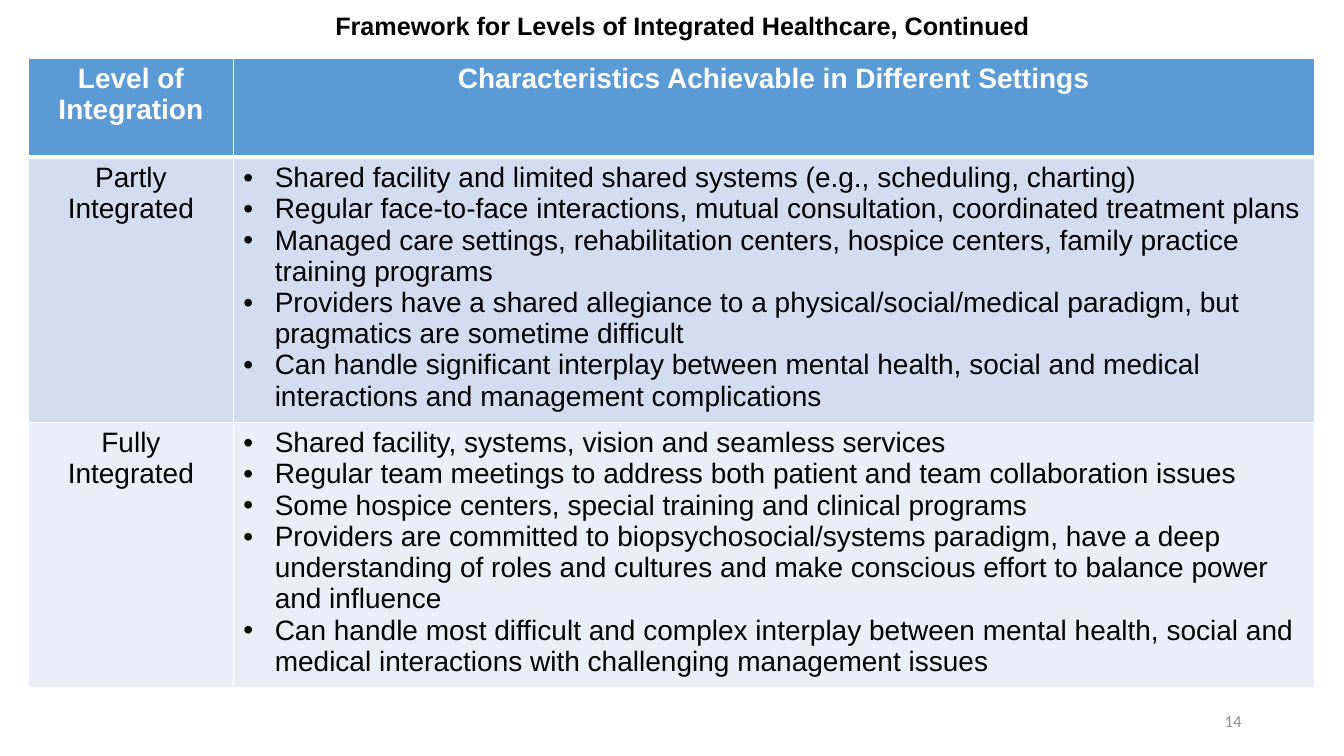
from lxml.etree import SubElement
from pptx import Presentation
from pptx.dml.color import RGBColor
from pptx.enum.text import MSO_ANCHOR, MSO_AUTO_SIZE, PP_ALIGN
from pptx.oxml.ns import qn
from pptx.util import Cm, Pt

BLACK = RGBColor(0x00, 0x00, 0x00)
WHITE = RGBColor(0xFF, 0xFF, 0xFF)
GRAY = RGBColor(0x8C, 0x8C, 0x8C)
HEADER_BLUE = RGBColor(0x5B, 0x9B, 0xD5)
BAND_BLUE = RGBColor(0xD2, 0xDE, 0xEF)
PALE_BLUE = RGBColor(0xEA, 0xEF, 0xF7)

TITLE_FONT = {"name": "Arial", "size": Pt(18), "bold": True}
HEADER_FONT = {"name": "Arial", "size": Pt(20), "bold": True}
BODY_FONT = {"name": "Arial", "size": Pt(20), "bold": False}
NUMBER_FONT = {"name": "Calibri", "size": Pt(12)}
MIDDLE_FRAME = {"word_wrap": True, "auto_size": MSO_AUTO_SIZE.NONE,
                "vertical_anchor": MSO_ANCHOR.MIDDLE}

HEADINGS = ("Level of Integration", ["Characteristics Achievable in Different Settings"])
LEVELS = [
    ("Partly Integrated", [
        "Shared facility and limited shared systems (e.g., scheduling, charting)",
        "Regular face-to-face interactions, mutual consultation, coordinated treatment plans",
        "Managed care settings, rehabilitation centers, hospice centers, family practice training programs",
        "Providers have a shared allegiance to a physical/social/medical paradigm, but pragmatics are sometime difficult",
        "Can handle significant interplay between mental health, social and medical interactions and management complications",
    ]),
    ("Fully Integrated", [
        "Shared facility, systems, vision and seamless services",
        "Regular team meetings to address both patient and team collaboration issues",
        "Some hospice centers, special training and clinical programs",
        "Providers are committed to biopsychosocial/systems paradigm, have a deep understanding of roles and cultures and make conscious effort to balance power and influence",
        "Can handle most difficult and complex interplay between mental health, social and medical interactions with challenging management issues",
    ]),
]


def apply_format(target, values):
    """Set each attribute named in the format values."""
    for attribute, value in values.items():
        setattr(target, attribute, value)


def write_paragraph(paragraph, wording, font, color, alignment):
    """Write one formatted run into a paragraph."""
    run = paragraph.add_run()
    run.text = wording
    apply_format(run.font, font)
    run.font.color.rgb = color
    paragraph.alignment = alignment


def add_bullet(paragraph):
    """Give a paragraph a round bullet and a hanging indent."""
    properties = paragraph._p.get_or_add_pPr()
    properties.set("marL", str(Cm(0.79)))
    properties.set("indent", str(-Cm(0.79)))
    SubElement(properties, qn("a:buFont"), typeface="Arial")
    SubElement(properties, qn("a:buChar"), char="•")


def set_borders(cell, top, bottom):
    """Draw white cell borders with the given top and bottom widths."""
    properties = cell._tc.get_or_add_tcPr()
    for side, width in (("L", 1), ("R", 1), ("T", top), ("B", bottom)):
        line = SubElement(properties, qn(f"a:ln{side}"), w=str(Pt(width)))
        fill = SubElement(line, qn("a:solidFill"))
        SubElement(fill, qn("a:srgbClr"), val=str(WHITE))


def fill_cell(cell, lines, font, color, background, borders, bulleted):
    """Style a cell and write its lines, as bullets or centred."""
    set_borders(cell, *borders)
    cell.fill.solid()
    cell.fill.fore_color.rgb = background
    for index, wording in enumerate(lines):
        paragraph = cell.text_frame.add_paragraph() if index else cell.text_frame.paragraphs[0]
        write_paragraph(paragraph, wording, font, color,
                        PP_ALIGN.LEFT if bulleted else PP_ALIGN.CENTER)
        if bulleted:
            add_bullet(paragraph)


def place_title(slide, left, top, width, height):
    """Place the slide title in the given box."""
    title = slide.shapes.title
    apply_format(title, {"left": left, "top": top, "width": width, "height": height})
    apply_format(title.text_frame, MIDDLE_FRAME)
    heading = title.text_frame.paragraphs[0]
    write_paragraph(heading, "Framework for Levels of Integrated Healthcare, Continued",
                    TITLE_FONT, BLACK, PP_ALIGN.CENTER)
    heading.line_spacing = 0.9


def place_levels(slide, left, top, width, height):
    """Place the table of integration levels in the given box."""
    levels = slide.shapes.add_table(len(LEVELS) + 1, 2, left, top, width, height).table
    level_width, header_height = Cm(5.16), Cm(2.49)
    levels.columns[0].width = level_width
    levels.columns[1].width = width - level_width
    levels.rows[0].height = header_height
    for row in list(levels.rows)[1:]:
        row.height = (height - header_height) // len(LEVELS)

    styles = [(HEADER_FONT, WHITE, HEADER_BLUE, (1, 3)),
              (BODY_FONT, BLACK, BAND_BLUE, (3, 1)),
              (BODY_FONT, BLACK, PALE_BLUE, (1, 1))]
    for index, ((level, traits), style) in enumerate(zip([HEADINGS, *LEVELS], styles)):
        fill_cell(levels.cell(index, 0), [level], *style, bulleted=False)
        fill_cell(levels.cell(index, 1), traits, *style, bulleted=index > 0)


def place_number(slide, left, top, width, height):
    """Place the slide number in the given box."""
    frame = slide.shapes.add_textbox(left, top, width, height).text_frame
    apply_format(frame, MIDDLE_FRAME)
    write_paragraph(frame.paragraphs[0], "14", NUMBER_FONT, GRAY, PP_ALIGN.RIGHT)


def main():
    """Build and save the slide."""
    deck = Presentation()
    apply_format(deck, {"slide_width": Cm(33.87), "slide_height": Cm(19.05)})
    slide = deck.slides.add_slide(deck.slide_layouts[5])
    place_title(slide, Cm(2.6), Cm(0.25), Cm(29.2), Cm(0.86))
    place_levels(slide, Cm(0.72), Cm(1.47), Cm(32.4), Cm(15.85))
    place_number(slide, Cm(23.92), Cm(17.65), Cm(7.62), Cm(1.01))
    deck.save("out.pptx")


if __name__ == "__main__":
    main()
